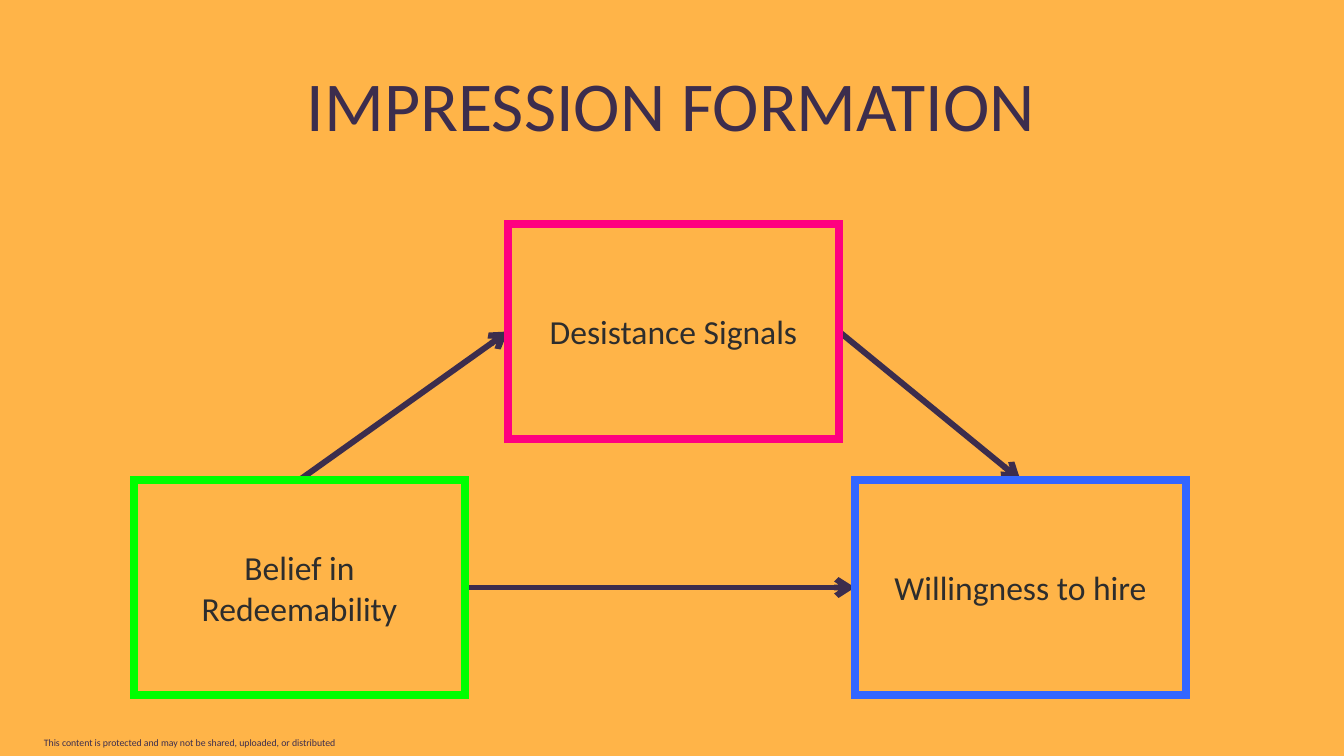
from dataclasses import dataclass

from lxml import etree
from pptx import Presentation
from pptx.dml.color import RGBColor
from pptx.enum.shapes import MSO_CONNECTOR, MSO_SHAPE
from pptx.enum.text import MSO_ANCHOR, MSO_AUTO_SIZE, PP_ALIGN
from pptx.oxml.ns import qn
from pptx.shapes.autoshape import Shape
from pptx.shapes.connector import Connector
from pptx.slide import Slide
from pptx.text.text import _Paragraph
from pptx.util import Emu, Pt

STRAIGHT = MSO_CONNECTOR.STRAIGHT
RECTANGLE = MSO_SHAPE.RECTANGLE
BOTTOM, MIDDLE = MSO_ANCHOR.BOTTOM, MSO_ANCHOR.MIDDLE
CENTER = PP_ALIGN.CENTER
NO_AUTOSIZE = MSO_AUTO_SIZE.NONE

SLIDE_WIDTH, SLIDE_HEIGHT = 1344, 756
EMU_PER_PX = 12192000 / SLIDE_WIDTH
BOX_WIDTH, BOX_HEIGHT = 331, 215
TOP, LEFT, RIGHT = 0, 1, 3

FONT = "Calibri"
ORANGE = "FFB448"
PURPLE = "3C2D4D"
CHARCOAL = "2D2D2D"


@dataclass(frozen=True)
class Box:
    text: str
    left: int
    top: int
    border: str


@dataclass(frozen=True)
class Arrow:
    source: str
    source_side: int
    target: str
    target_side: int


BOXES = {
    "belief": Box("Belief in Redeemability", 134, 480, "00FF00"),
    "signals": Box("Desistance Signals", 508, 224, "FF0080"),
    "hire": Box("Willingness to hire", 855, 480, "3366FF"),
}
ARROWS = [
    Arrow("signals", RIGHT, "hire", TOP),
    Arrow("belief", RIGHT, "hire", LEFT),
    Arrow("belief", TOP, "signals", LEFT),
]


def px(length: int) -> Emu:
    return Emu(round(length * EMU_PER_PX))


def color(hex_value: str) -> RGBColor:
    return RGBColor.from_string(hex_value)


def format_text(paragraph: _Paragraph, size: int, hex_value: str) -> None:
    paragraph.font.name = FONT
    paragraph.font.size = Pt(size)
    paragraph.font.color.rgb = color(hex_value)


def set_title(slide: Slide, text: str) -> None:
    title = slide.shapes.title
    title.left, title.top, title.width, title.height = px(208), px(41), px(927), px(106)
    frame = title.text_frame
    frame.text = text
    frame.auto_size = NO_AUTOSIZE
    frame.vertical_anchor = BOTTOM
    frame.margin_left = frame.margin_top = frame.margin_right = frame.margin_bottom = 0
    paragraph = frame.paragraphs[0]
    paragraph.alignment = CENTER
    paragraph.line_spacing = 0.9
    format_text(paragraph, 50, PURPLE)


def add_footer(slide: Slide, text: str) -> None:
    footer = slide.shapes.add_textbox(px(34), px(732), px(478), px(22))
    footer.text_frame.word_wrap = True
    footer.text_frame.text = text
    format_text(footer.text_frame.paragraphs[0], 7, PURPLE)


def add_box(slide: Slide, box: Box) -> Shape:
    shape = slide.shapes.add_shape(
        RECTANGLE, px(box.left), px(box.top), px(BOX_WIDTH), px(BOX_HEIGHT)
    )
    shape.shadow.inherit = False
    shape.fill.background()
    shape.line.color.rgb = color(box.border)
    shape.line.width = Pt(6)
    outline = shape.element.spPr.find(qn("a:ln"))
    etree.SubElement(outline, qn("a:miter"), lim="800000")
    shape.text_frame.vertical_anchor = MIDDLE
    shape.text_frame.text = box.text
    paragraph = shape.text_frame.paragraphs[0]
    paragraph.alignment = CENTER
    format_text(paragraph, 24, CHARCOAL)
    return shape


def add_arrow(slide: Slide, arrow: Arrow, shapes: dict[str, Shape]) -> Connector:
    connector = slide.shapes.add_connector(STRAIGHT, 0, 0, 0, 0)
    connector.begin_connect(shapes[arrow.source], arrow.source_side)
    connector.end_connect(shapes[arrow.target], arrow.target_side)
    connector.line.color.rgb = color(PURPLE)
    connector.line.width = Pt(4.25)
    properties = connector.element.spPr
    etree.SubElement(properties.find(qn("a:ln")), qn("a:tailEnd"), type="arrow")
    etree.SubElement(properties, qn("a:effectLst"))
    return connector


def main() -> None:
    presentation = Presentation()
    presentation.slide_width = px(SLIDE_WIDTH)
    presentation.slide_height = px(SLIDE_HEIGHT)
    slide = presentation.slides.add_slide(presentation.slide_layouts[5])

    # Background, footer and title
    slide.background.fill.solid()
    slide.background.fill.fore_color.rgb = color(ORANGE)
    add_footer(slide, "This content is protected and may not be shared, uploaded, or distributed")
    set_title(slide, "IMPRESSION FORMATION")

    # Boxes, with the arrows moved behind them
    shapes = {name: add_box(slide, box) for name, box in BOXES.items()}
    for arrow in ARROWS:
        connector = add_arrow(slide, arrow, shapes)
        shapes["belief"].element.addprevious(connector.element)

    presentation.save("out.pptx")


if __name__ == "__main__":
    main()
